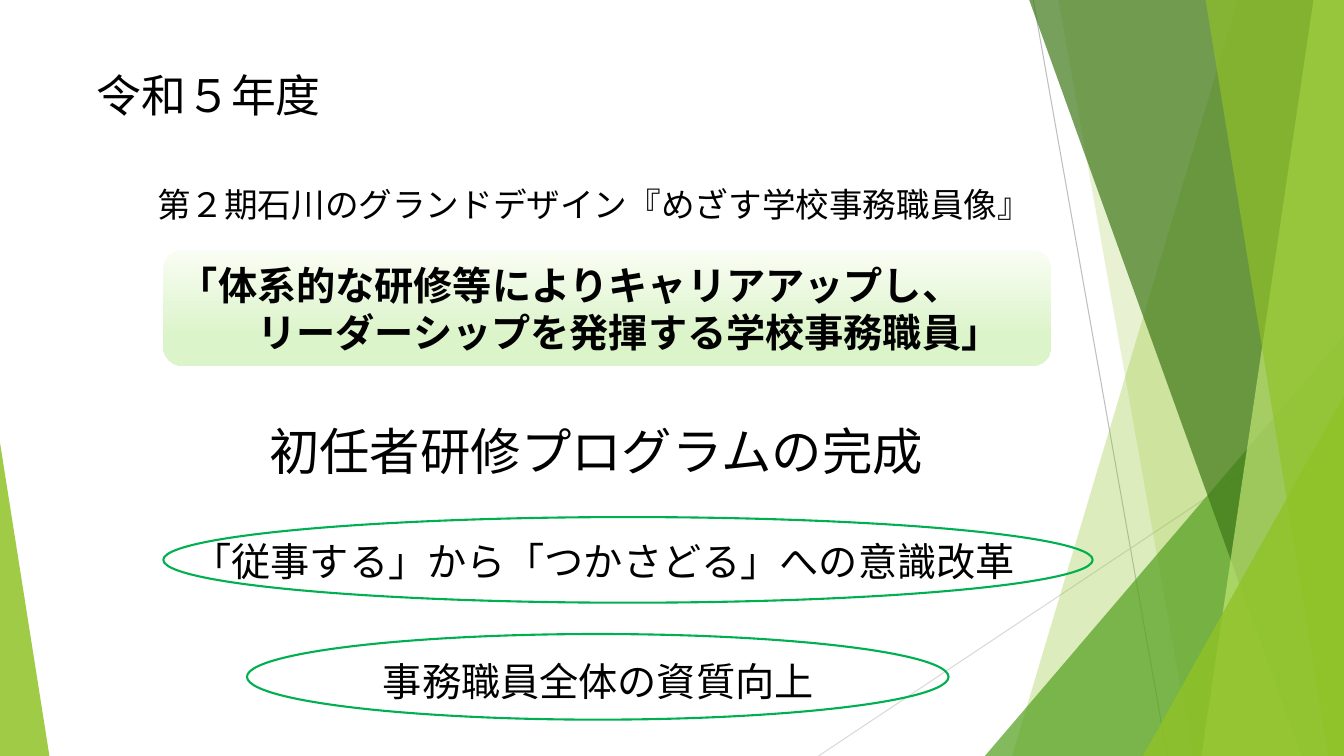
from lxml import etree
from pptx import Presentation, util as u
from pptx.dml.color import RGBColor
from pptx.enum import shapes as sh, text as tx
from pptx.oxml.ns import qn

FONT = "Noto Sans CJK JP"
BLACK, LIME, RING = "000000", "90C226", "00B050"


def rgb(code):
    return RGBColor.from_string(code)


def place(box, x, y, w, h):
    """Turn percentages of a box into left, top, width, height."""
    left, top, wide, high = box
    return (int(left + wide * x / 100), int(top + high * y / 100),
            int(wide * w / 100), int(high * h / 100))


def tint(shape, code, alpha):
    shape.shadow.inherit = False
    shape.fill.solid()
    shape.fill.fore_color.rgb = rgb(code)
    shape.line.fill.background()
    color = shape.fill._xPr.find(".//" + qn("a:srgbClr"))
    etree.SubElement(color, qn("a:alpha"), val=str(alpha * 1000))


def write(shape, lines, size, bold=False, indent=0, pitch=None):
    """Set lines of text; each line after the first is indented by some characters."""
    frame = shape.text_frame
    frame.word_wrap = True
    frame.vertical_anchor = tx.MSO_ANCHOR.MIDDLE
    for i, line in enumerate(lines):
        para = frame.add_paragraph() if i else frame.paragraphs[0]
        para.alignment = tx.PP_ALIGN.LEFT
        if pitch:
            para.line_spacing = u.Pt(pitch)
        if i and indent:
            para._p.get_or_add_pPr().set("marL", str(u.Pt(size * indent)))
        run = para.add_run()
        run.text = line
        font = run.font
        font.size, font.bold, font.name = u.Pt(size), bold, FONT
        font.color.rgb = rgb(BLACK)
        east = etree.Element(qn("a:ea"), typeface=FONT)
        run._r.rPr.find(qn("a:latin")).addnext(east)


def wedge(slide, box, x, y, w, tip, code, alpha):
    """Triangle standing on the bottom edge of the box."""
    shape = slide.shapes.add_shape(sh.MSO_SHAPE.ISOSCELES_TRIANGLE,
                                   *place(box, x, y, w, 100 - y))
    shape.adjustments[0] = tip
    tint(shape, code, alpha)


def facet(slide, box, top, foot, code, alpha):
    """Full-height panel with a slanted left edge."""
    spots = [(top, 0), (100, 0), (100, 100), (foot, 100)]
    pts = [place(box, x, y, 0, 0)[:2] for x, y in spots]
    pen = slide.shapes.build_freeform(*pts[0])
    pen.add_line_segments(pts[1:], close=True)
    tint(pen.convert_to_shape(), code, alpha)


def backdrop(slide, box):
    # Thin crossing lines
    for x1, y1, x2, y2, code in [(76.88, 0, 86.85, 100, "BFBFBF"),
                                 (100, 53.73, 60.9, 100, "D9D9D9")]:
        line = slide.shapes.add_connector(
            sh.MSO_CONNECTOR.STRAIGHT,
            *place(box, x1, y1, 0, 0)[:2], *place(box, x2, y2, 0, 0)[:2])
        line.line.color.rgb = rgb(code)
        line.line.width = u.Pt(0.75)
        etree.SubElement(line._element.spPr, qn("a:effectLst"))
    # Panels and triangles on the right
    facet(slide, box, 92.1, 75.3, LIME, 30)
    facet(slide, box, 78.75, 88.73, LIME, 20)
    wedge(slide, box, 73.28, 44.4, 26.72, 1, "54A021", 72)
    facet(slide, box, 76.58, 96.83, "3F7819", 70)
    facet(slide, box, 97.73, 89.4, "C0E474", 70)
    facet(slide, box, 89.7, 98.85, LIME, 65)
    wedge(slide, box, 85.05, 52.4, 14.95, 1, LIME, 80)
    # Triangle on the left
    wedge(slide, box, 0, 58.53, 3.68, 0, LIME, 85)


def banner(slide, box):
    shape = slide.shapes.add_shape(sh.MSO_SHAPE.ROUNDED_RECTANGLE, *box)
    shape.shadow.inherit = False
    shape.line.fill.background()
    shape.fill.gradient()
    shape.fill.gradient_angle = 270
    stops = [(0, "FAFDF3"), (0.74, "DBF4CA")]
    for stop, (spot, code) in zip(shape.fill.gradient_stops, stops):
        stop.position = spot
        stop.color.rgb = rgb(code)
    write(shape, ["「体系的な研修等によりキャリアアップし、",
                  "リーダーシップを発揮する学校事務職員」"],
          28, bold=True, indent=2, pitch=33.6)


def content(slide, box):
    banner(slide, place(box, 12.15, 33.07, 66.08, 15.33))
    # Headings and goals
    for spot, size, line in [
            ((6.45, 8.27, 22.28, 8.53), 32, "令和５年度"),
            ((10.95, 23.6, 78.08, 6.67), 24,
             "第２期石川のグランドデザイン『めざす学校事務職員像』"),
            ((19.28, 54.8, 53.78, 9.47), 36, "初任者研修プログラムの完成"),
            ((13.58, 70.4, 69.45, 7.6), 28,
             "「従事する」から「つかさどる」への意識改革"),
            ((27.75, 86.27, 39.53, 7.6), 28, "事務職員全体の資質向上")]:
        write(slide.shapes.add_textbox(*place(box, *spot)), [line], size)
    # Rings around the goals
    for x, y, w in [(12.15, 68.4, 69.15), (18.38, 83.87, 52.2)]:
        ring = slide.shapes.add_shape(sh.MSO_SHAPE.OVAL,
                                      *place(box, x, y, w, 11.33))
        ring.shadow.inherit = False
        ring.fill.background()
        ring.line.color.rgb = rgb(RING)
        ring.line.width = u.Pt(1.5)


def main():
    deck = Presentation()
    deck.slide_width, deck.slide_height = u.Inches(13.33), u.Inches(7.5)
    slide = deck.slides.add_slide(deck.slide_layouts[6])
    page = (0, 0, deck.slide_width, deck.slide_height)
    backdrop(slide, page)
    content(slide, page)
    deck.save("out.pptx")


if __name__ == "__main__":
    main()
